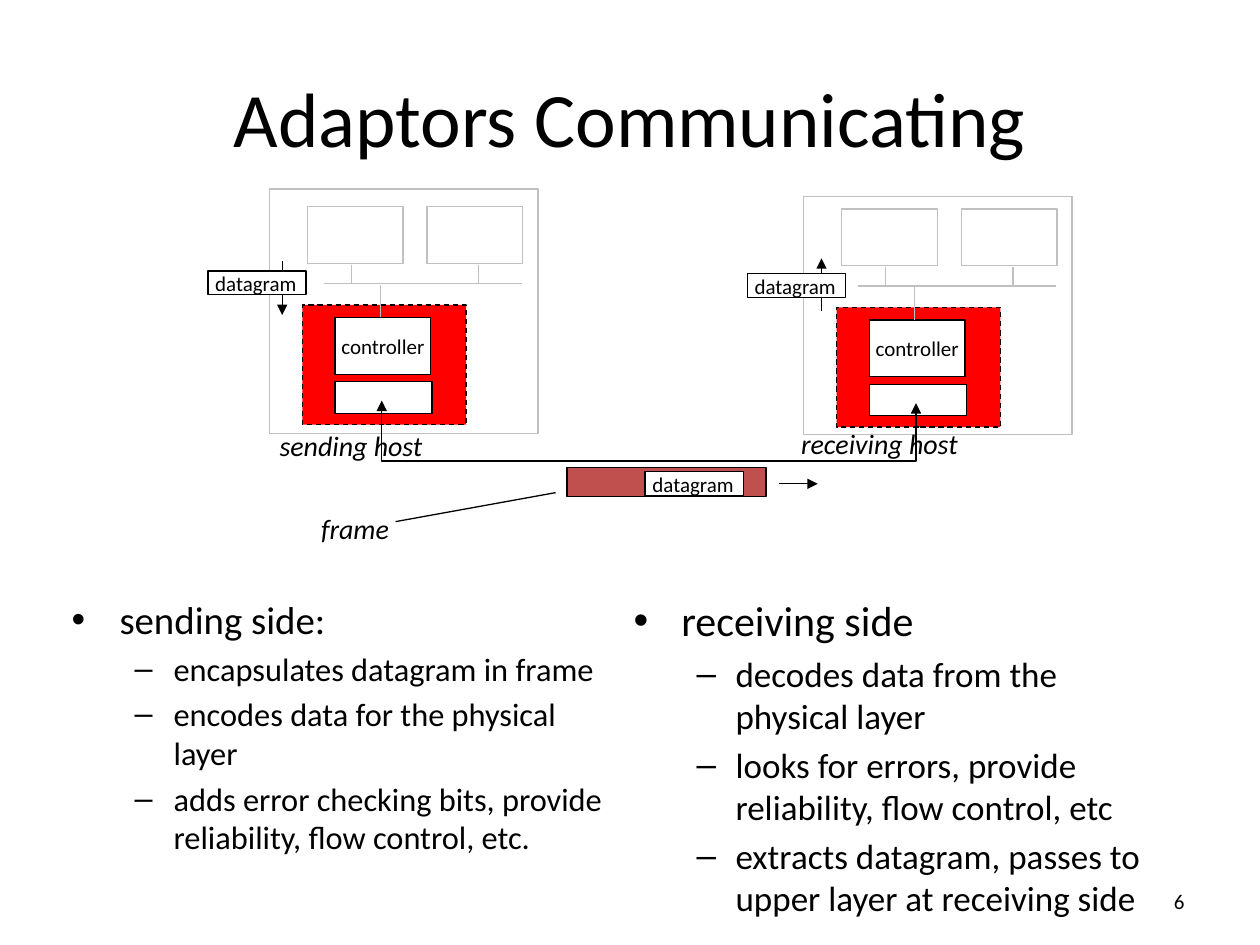
from lxml.etree import SubElement as Sub
from pptx import Presentation
from pptx.dml.color import RGBColor
from pptx.enum.dml import MSO_LINE as Dash
from pptx.enum.shapes import MSO_CONNECTOR as Link, MSO_SHAPE as Form
from pptx.enum.text import MSO_ANCHOR as Anchor, PP_ALIGN as Align
from pptx.oxml.ns import qn
from pptx.util import Cm, Pt

BLACK = RGBColor(0x00, 0x00, 0x00)
WHITE = RGBColor(0xFF, 0xFF, 0xFF)
GREY = RGBColor(0xC0, 0xC0, 0xC0)
RED = RGBColor(0xFF, 0x00, 0x00)
BRICK = RGBColor(0xC0, 0x50, 0x4D)

# Content: places are in inches
TITLE = "Adaptors Communicating"
PAGE = "6"
SIDES = [
    ((0.47, 4.68, 4.45, 2.55), 22.2, 18.5, "sending side:", [
        "encapsulates datagram in frame",
        "encodes data for the physical layer",
        "adds error checking bits, provide reliability, flow control, etc.",
    ]),
    ((4.93, 4.67, 4.47, 2.55), 24, 20, "receiving side", [
        "decodes data from the physical layer",
        "looks for errors, provide reliability, flow control, etc",
        "extracts datagram, passes to upper layer at receiving side",
    ]),
]
# Shift of the parts, then the outer box of each host
HOSTS = [
    (0, 0, (2.14, 1.5, 2.13, 1.94)),
    (4.24, 0.02, (6.38, 1.56, 2.13, 1.89)),
]
LABELS = [
    ("sending host", (2.12, 3.35, 1.41, 0.37)),
    ("receiving host", (6.26, 3.34, 1.52, 0.37)),
    ("frame", (2.45, 4.01, 0.83, 0.37)),
]
GRAMS = [(1.65, 2.15), (5.93, 2.17), (5.12, 3.74)]
CABLE = [(3.03, 3.18), (3.03, 3.66), (7.27, 3.66), (7.27, 3.2)]

deck = Presentation()
deck.slide_width, deck.slide_height = Cm(25.4), Cm(19.05)
slide = deck.slides.add_slide(deck.slide_layouts[6])
shapes = slide.shapes


def place(*spots):
    return [Cm(2.54 * spot) for spot in spots]


def write(frame, text, size=12, align=Align.LEFT, slant=False, gap=0, first=True):
    para = frame.paragraphs[0] if first else frame.add_paragraph()
    para.alignment = align
    para.space_before = Pt(gap)
    run = para.add_run()
    run.text = text
    font = run.font
    font.name, font.size, font.italic = "Calibri", Pt(size), slant
    font.color.rgb = BLACK
    return para


def text_box(spot, text, wrap=False, anchor=Anchor.TOP, **style):
    frame = shapes.add_textbox(*place(*spot)).text_frame
    frame.word_wrap, frame.vertical_anchor = wrap, anchor
    write(frame, text, **style)


def box(spot, fill=WHITE, edge=BLACK, dash=None):
    shape = shapes.add_shape(Form.RECTANGLE, *place(*spot))
    shape.shadow.inherit = False
    shape.fill.solid()
    shape.fill.fore_color.rgb = fill
    stroke(shape, edge)
    if dash:
        shape.line.dash_style = dash
    return shape


def stroke(shape, color, ends=()):
    shape.line.color.rgb = color
    shape.line.width = Pt(0.75)
    for end in ends:
        Sub(shape.line._get_or_add_ln(), qn("a:" + end), type="triangle")


def wire(x1, y1, x2, y2, color=BLACK, ends=()):
    line = shapes.add_connector(Link.STRAIGHT, *place(x1, y1, x2, y2))
    stroke(line, color, ends)
    Sub(line._element.spPr, qn("a:effectLst"))


def bullet(para, mark, left, hang):
    props = para._p.get_or_add_pPr()
    props.set("marL", str(Cm(2.54 * left)))
    props.set("indent", str(-Cm(2.54 * hang)))
    Sub(props, qn("a:buFont"), typeface="Arial")
    Sub(props, qn("a:buChar"), char=mark)


def draw_host(dx, dy, outer):
    def at(x, y, *size):
        return (x + dx, y + dy, *size)

    box(outer, edge=GREY)
    # Adaptor card
    box(at(2.4, 2.42, 1.3, 0.95), RED, dash=Dash.DASH)
    box(at(2.66, 3.03, 0.77, 0.25))
    chip = box(at(2.66, 2.52, 0.76, 0.45)).text_frame
    chip.word_wrap, chip.vertical_anchor = False, Anchor.MIDDLE
    write(chip, "controller", align=Align.CENTER)
    # Bus with its two upper units
    wire(*at(2.57, 2.25), *at(4.14, 2.25), GREY)
    wire(*at(3.02, 2.52), *at(3.02, 2.26), GREY)
    for left, stem in ((2.44, 2.79), (3.39, 3.8)):
        box(at(left, 1.64, 0.76, 0.45), edge=GREY)
        wire(*at(stem, 2.25), *at(stem, 2.1), GREY)


# Title, page number and the two lists
text_box((0.5, 0.3, 9, 1.25), TITLE, True, Anchor.MIDDLE, size=44, align=Align.CENTER)
text_box((7.17, 6.95, 2.33, 0.4), PAGE, True, Anchor.MIDDLE, align=Align.RIGHT)
for spot, big, small, head, points in SIDES:
    frame = shapes.add_textbox(*place(*spot)).text_frame
    frame.word_wrap = True
    bullet(write(frame, head, size=big, gap=big / 5), "•", 0.38, 0.38)
    for point in points:
        para = write(frame, point, size=small, gap=small / 5, first=False)
        para.level = 1
        bullet(para, "–", 0.81, 0.31)

# Hosts, frame and their names
box((4.5, 3.71, 1.58, 0.23), BRICK)
for host in HOSTS:
    draw_host(*host)
for name, spot in LABELS:
    text_box(spot, name, size=16, slant=True)

# Arrows beside the hosts, then the datagrams over them
wire(2.24, 2.07, 2.24, 2.5, ends=["tailEnd"])
wire(6.52, 2.05, 6.52, 2.47, ends=["headEnd"])
for x, y in GRAMS:
    box((x, y, 0.78, 0.19))
    text_box((x - 0.04, y - 0.05, 0.86, 0.3), "datagram")

# Cable between the adaptors
pen = shapes.build_freeform(*place(*CABLE[0]))
pen.add_line_segments([place(*spot) for spot in CABLE[1:]], close=False)
cable = pen.convert_to_shape()
cable.shadow.inherit = False
cable.fill.background()
stroke(cable, BLACK, ["headEnd", "tailEnd"])

# Way of the frame and its pointer
wire(6.18, 3.84, 6.49, 3.84, ends=["tailEnd"])
wire(3.14, 4.14, 4.41, 3.91)

deck.save("out.pptx")
